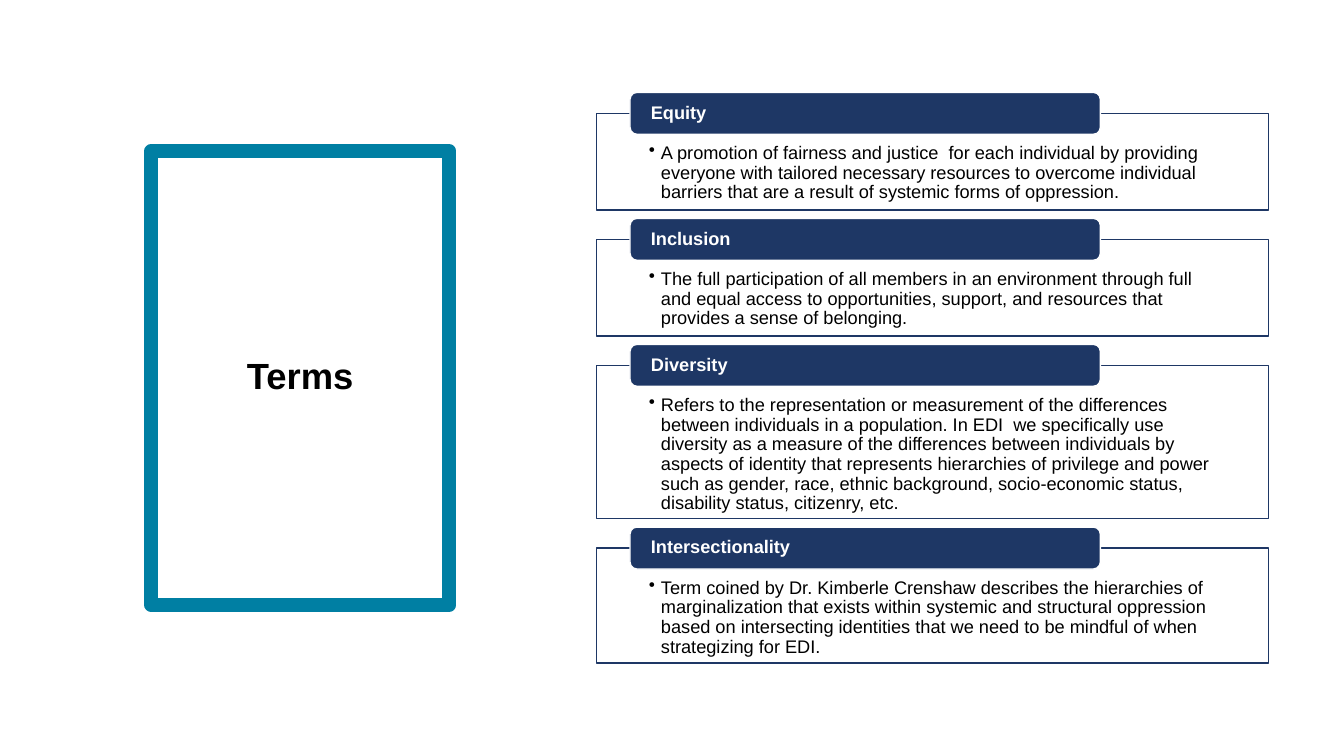
from dataclasses import dataclass

from lxml import etree
from pptx import Presentation
from pptx import util as u
from pptx.dml.color import RGBColor
from pptx.enum import shapes, text
from pptx.oxml.ns import qn

COLOURS = {"navy": "1E3765", "teal": "007FA3", "white": "FFFFFF", "black": "000000"}
FONT = "Arial"

# Square grid: 160 columns by 90 rows
COLUMNS, ROWS = 160, 90
CELL = u.Inches(7.5) / ROWS

BOX_LEFT, BOX_WIDTH = 71, 80
TAB_LEFT, TAB_WIDTH, TAB_HEIGHT, TAB_RISE = 75, 56, 5, 2.5
FIRST_TOP, GAP = 13.5, 3.5


@dataclass
class Term:
    name: str
    meaning: str
    rows: float


TERMS = [
    Term("Equity",
         "A promotion of fairness and justice  for each individual by providing "
         "everyone with tailored necessary resources to overcome individual "
         "barriers that are a result of systemic forms of oppression.", 11.5),
    Term("Inclusion",
         "The full participation of all members in an environment through full "
         "and equal access to opportunities, support, and resources that "
         "provides a sense of belonging.", 11.5),
    Term("Diversity",
         "Refers to the representation or measurement of the differences "
         "between individuals in a population. In EDI  we specifically use "
         "diversity as a measure of the differences between individuals by "
         "aspects of identity that represents hierarchies of privilege and power "
         "such as gender, race, ethnic background, socio-economic status, "
         "disability status, citizenry, etc.", 18.25),
    Term("Intersectionality",
         "Term coined by Dr. Kimberle Crenshaw describes the hierarchies of "
         "marginalization that exists within systemic and structural oppression "
         "based on intersecting identities that we need to be mindful of when "
         "strategizing for EDI.", 13.7),
]


def cells(count: float) -> u.Emu:
    return u.Emu(round(count * CELL))


def colour(name: str) -> RGBColor:
    return RGBColor.from_string(COLOURS[name])


def outline(shape, name: str, points: float) -> None:
    shape.line.color.rgb = colour(name)
    shape.line.width = u.Pt(points)


def add_panel(page, kind, left: float, top: float, width: float, height: float,
              fill: str, line: str):
    panel = page.shapes.add_shape(kind, *map(cells, (left, top, width, height)))
    panel.shadow.inherit = False
    panel.fill.solid()
    panel.fill.fore_color.rgb = colour(fill)
    outline(panel, line, 1)
    return panel


def write(shape, words: str, size: float, name: str, bold: bool, align, anchor):
    frame = shape.text_frame
    frame.word_wrap = True
    frame.auto_size = text.MSO_AUTO_SIZE.NONE
    frame.vertical_anchor = anchor
    para = frame.paragraphs[0]
    para.alignment = align
    para.line_spacing = 0.9
    span = para.add_run()
    span.text = words
    span.font.name = FONT
    span.font.size = u.Pt(size)
    span.font.bold = bold
    span.font.color.rgb = colour(name)
    return para


def set_insets(shape, side: float, top: float, bottom: float) -> None:
    frame = shape.text_frame
    frame.margin_left = frame.margin_right = cells(side)
    frame.margin_top, frame.margin_bottom = cells(top), cells(bottom)


def add_bullet(para) -> None:
    properties = para._p.get_or_add_pPr()
    indent = u.Inches(0.12)
    properties.set("marL", str(indent))
    properties.set("indent", str(-indent))
    etree.SubElement(properties, qn("a:buChar"), char="•")


def add_term(page, term: Term, top: float) -> None:
    # Description box
    box = add_panel(page, shapes.MSO_SHAPE.RECTANGLE, BOX_LEFT, top, BOX_WIDTH,
                    term.rows, "white", "navy")
    tint = box._element.spPr.find(qn("a:solidFill")).find(qn("a:srgbClr"))
    etree.SubElement(tint, qn("a:alpha"), val="90000")
    set_insets(box, 6.25, 3.6, 1.2)
    add_bullet(write(box, term.meaning, 13, "black", False,
                     text.PP_ALIGN.LEFT, text.MSO_ANCHOR.TOP))

    # Heading tab over its top edge
    tab = add_panel(page, shapes.MSO_SHAPE.ROUNDED_RECTANGLE, TAB_LEFT,
                    top - TAB_RISE, TAB_WIDTH, TAB_HEIGHT, "navy", "white")
    set_insets(tab, 2.25, 0, 0)
    write(tab, term.name, 13, "white", True,
          text.PP_ALIGN.LEFT, text.MSO_ANCHOR.MIDDLE)


def add_title(page) -> None:
    title = page.shapes.title
    title.left, title.top, title.width, title.height = map(cells, (18, 18, 35.5, 54))
    outline(title, "teal", 10)
    etree.SubElement(title.line._get_or_add_ln(), qn("a:round"))
    write(title, "Terms", 26, "black", True,
          text.PP_ALIGN.CENTER, text.MSO_ANCHOR.MIDDLE)


def main() -> None:
    deck = Presentation()
    deck.slide_width, deck.slide_height = cells(COLUMNS), cells(ROWS)
    page = deck.slides.add_slide(deck.slide_layouts[5])
    add_title(page)

    # Stack of terms
    top = FIRST_TOP
    for term in TERMS:
        add_term(page, term, top)
        top += term.rows + GAP

    deck.save("out.pptx")


if __name__ == "__main__":
    main()
